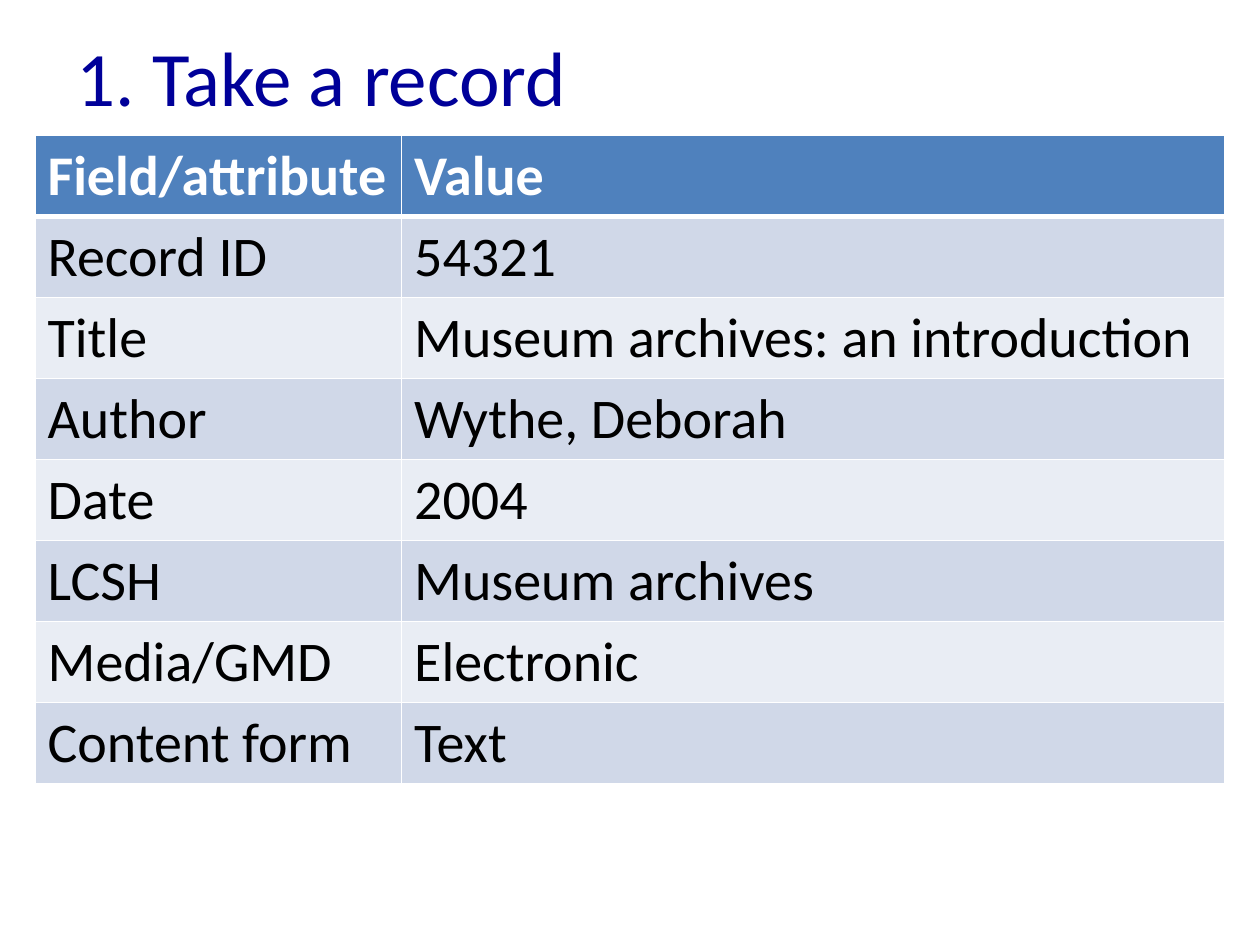
from lxml import etree
from pptx import Presentation
from pptx.dml.color import RGBColor
from pptx.enum.text import MSO_ANCHOR
from pptx.oxml.ns import qn
from pptx.util import Pt

MIDDLE = MSO_ANCHOR.MIDDLE
FONT = "Calibri"
WHITE = "FFFFFF"
HEAD = "4F81BD"
BANDS = ("E9EDF4", "D0D8E8")
ROWS = [
    ("Field/attribute", "Value"),
    ("Record ID", "54321"),
    ("Title", "Museum archives: an introduction"),
    ("Author", "Wythe, Deborah"),
    ("Date", "2004"),
    ("LCSH", "Museum archives"),
    ("Media/GMD", "Electronic"),
    ("Content form", "Text"),
]


def color(code):
    """Turn a hex string into a colour."""
    return RGBColor.from_string(code)


def write(frame, text, size, code, bold=False):
    """Put one styled line of text into a frame."""
    frame.text = text
    font = frame.paragraphs[0].runs[0].font
    font.name, font.size, font.bold = FONT, Pt(size), bold
    font.color.rgb = color(code)


def edge(cell, side, width):
    """Draw a white border on one side of a cell, ahead of its fill."""
    line = etree.Element(qn(f"a:ln{side}"), w=str(Pt(width)))
    fill = etree.SubElement(line, qn("a:solidFill"))
    etree.SubElement(fill, qn("a:srgbClr"), val=WHITE)
    props = cell._tc.get_or_add_tcPr()
    props.insert(len(props) - 1, line)


def add_title(slide, left, top, width, height):
    """Place the heading in its box."""
    box = slide.shapes.add_textbox(Pt(left), Pt(top), Pt(width), Pt(height))
    frame = box.text_frame
    frame.word_wrap = True
    frame.vertical_anchor = MIDDLE
    write(frame, "1. Take a record", 44, "000099")


def add_record(slide, left, top, width, height):
    """Place the record table in its box, with a header and banded rows."""
    shape = slide.shapes.add_table(
        len(ROWS), 2, Pt(left), Pt(top), Pt(width), Pt(height))
    table = shape.table
    first = 209.5
    table.columns[0].width = Pt(first)
    table.columns[1].width = Pt(width - first)
    for r, row in enumerate(ROWS):
        head = r == 0
        for c, text in enumerate(row):
            cell = table.cell(r, c)
            write(cell.text_frame, text, 32, WHITE if head else "000000", head)
            cell.fill.solid()
            cell.fill.fore_color.rgb = color(HEAD if head else BANDS[r % 2])
            for side in "LRTB":
                thick = (head and side == "B") or (r == 1 and side == "T")
                edge(cell, side, 3 if thick else 1)


def main():
    """Build the slide and save it."""
    deck = Presentation()
    deck.slide_width, deck.slide_height = Pt(720), Pt(540)
    slide = deck.slides.add_slide(deck.slide_layouts[6])
    add_title(slide, 36.5, 9.5, 648, 67)
    add_record(slide, 20, 77.5, 680, 370.4)
    deck.save("out.pptx")


if __name__ == "__main__":
    main()
